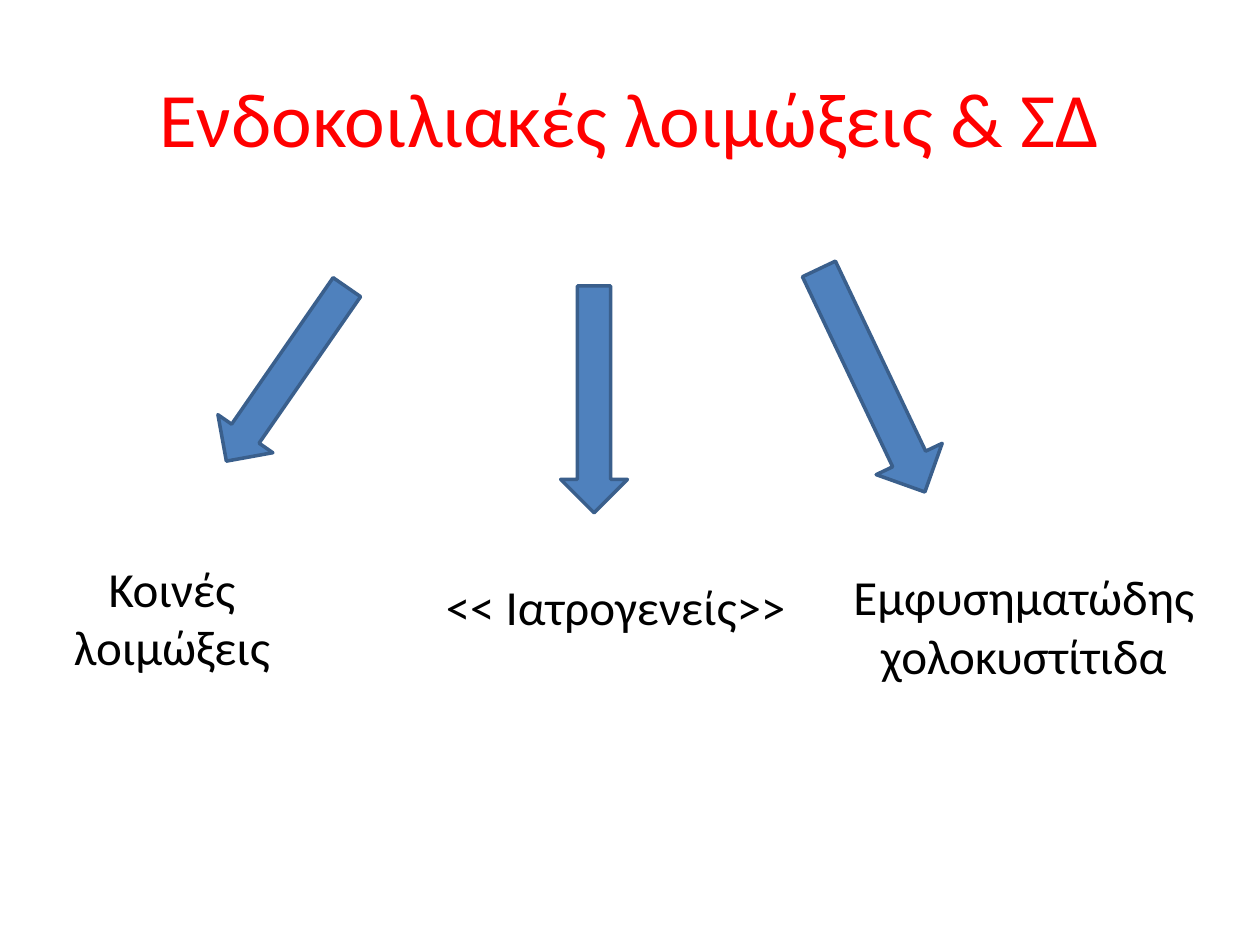
from dataclasses import dataclass

from pptx import Presentation
from pptx.dml.color import RGBColor
from pptx.enum.shapes import MSO_SHAPE as Shape
from pptx.enum.text import MSO_ANCHOR as Anchor, MSO_AUTO_SIZE as AutoSize, PP_ALIGN as Align
from pptx.slide import Slide
from pptx.text.text import TextFrame
from pptx.util import Inches, Pt

COLORS = {"title": "FF0000", "text": "000000", "arrow": "4F81BD", "outline": "3A5F8C"}


@dataclass(frozen=True)
class Area:
    left: float
    top: float
    width: float
    height: float

    def lengths(self) -> list[Inches]:
        return [Inches(value) for value in (self.left, self.top, self.width, self.height)]


@dataclass(frozen=True)
class Category:
    text: str
    area: Area
    align: Align
    arrow: Area
    rotation: float


CATEGORIES = [
    Category("Κοινές λοιμώξεις", Area(0.31, 4.38, 2.11, 1.04), Align.CENTER,
             Area(2.01, 2.13, 0.53, 1.68), 34.7),
    Category("<< Ιατρογενείς>>", Area(3.44, 4.53, 2.97, 0.57), Align.LEFT,
             Area(4.45, 2.27, 0.53, 1.8), 0),
    Category("Εμφυσηματώδης χολοκυστίτιδα", Area(6.64, 4.45, 2.97, 1.04), Align.CENTER,
             Area(6.63, 2.04, 0.58, 1.96), 334.6),
]


def write(frame: TextFrame, text: str, size: float, color: str, align: Align,
          frame_format: dict) -> None:
    for name, value in frame_format.items():
        setattr(frame, name, value)
    para = frame.paragraphs[0]
    para.alignment = align
    span = para.add_run()
    span.text = text
    for name, value in {"name": "Calibri", "size": Pt(size)}.items():
        setattr(span.font, name, value)
    span.font.color.rgb = RGBColor.from_string(COLORS[color])


def add_title(page: Slide, text: str, area: Area) -> None:
    title = page.shapes.title
    for name, value in zip(("left", "top", "width", "height"), area.lengths()):
        setattr(title, name, value)
    write(title.text_frame, text, 44, "title", Align.CENTER,
          {"word_wrap": True, "vertical_anchor": Anchor.MIDDLE})


def add_label(page: Slide, category: Category) -> None:
    box = page.shapes.add_textbox(*category.area.lengths())
    write(box.text_frame, category.text, 28, "text", category.align,
          {"word_wrap": True, "auto_size": AutoSize.SHAPE_TO_FIT_TEXT})


def add_arrow(page: Slide, category: Category) -> None:
    arrow = page.shapes.add_shape(Shape.DOWN_ARROW, *category.arrow.lengths())
    arrow.rotation = category.rotation
    arrow.shadow.inherit = False
    arrow.fill.solid()
    arrow.fill.fore_color.rgb = RGBColor.from_string(COLORS["arrow"])
    arrow.line.color.rgb = RGBColor.from_string(COLORS["outline"])
    arrow.line.width = Pt(2)


def main() -> None:
    deck = Presentation()
    deck.slide_width, deck.slide_height = Inches(10), Inches(7.5)
    page = deck.slides.add_slide(deck.slide_layouts.get_by_name("Title Only"))
    add_title(page, "Ενδοκοιλιακές λοιμώξεις & ΣΔ", Area(0.5, 0.3, 9, 1.25))
    for draw in (add_label, add_arrow):
        for category in CATEGORIES:
            draw(page, category)
    deck.save("out.pptx")


if __name__ == "__main__":
    main()
